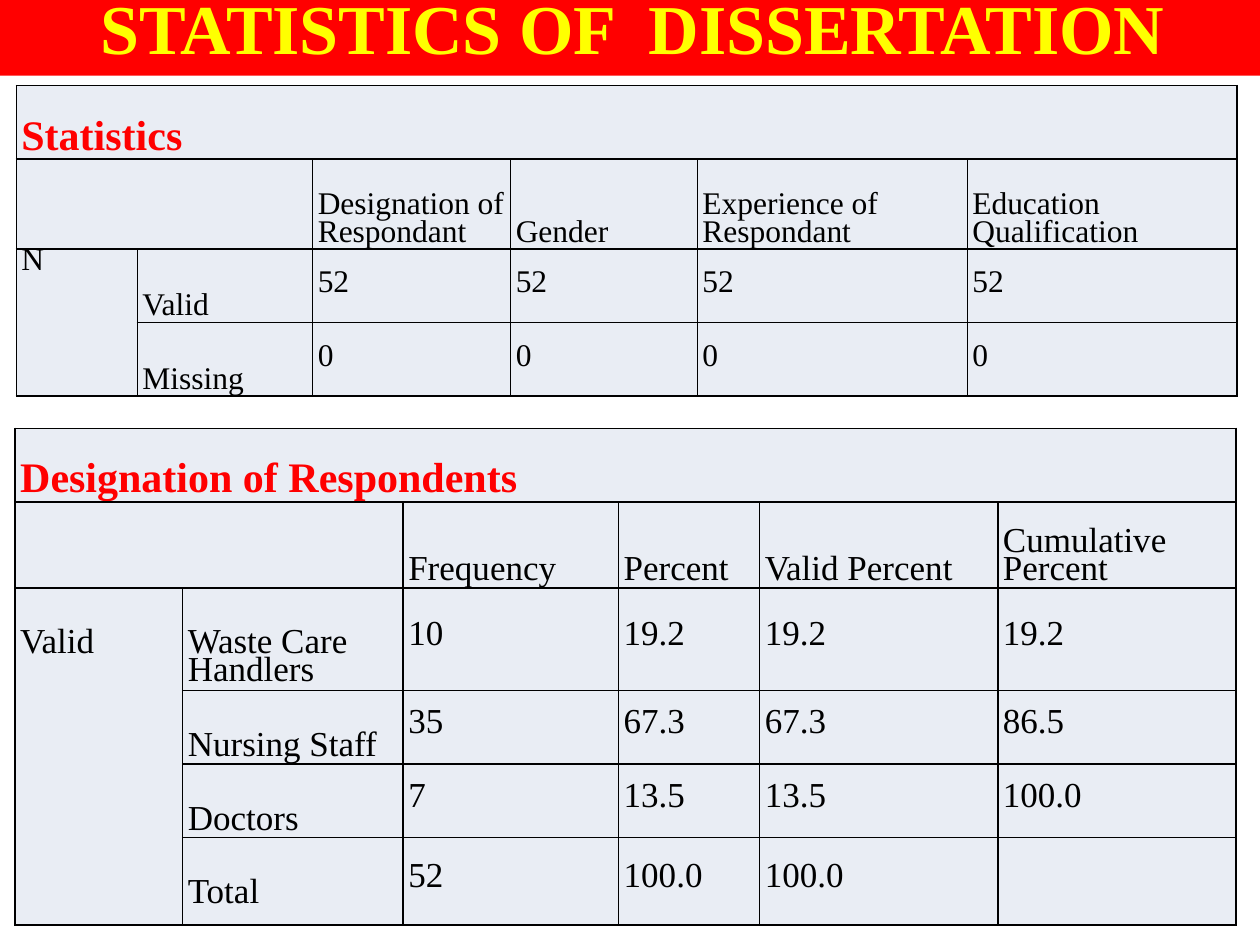
from lxml import etree
from pptx import Presentation
from pptx import util as u
from pptx.dml.color import RGBColor
from pptx.enum import shapes, text
from pptx.oxml import ns

WIDTH, HEIGHT = u.Inches(10), u.Inches(7.5)
FONT = "Times New Roman"
RED, YELLOW, BLACK, PALE = "FF0000", "FFFF00", "000000", "E9EDF4"
LINE = u.Pt(16)
GAP = u.Pt(10)
LOWERED = LINE + GAP  # top inset that drops text by one line and its gap
TOP, MIDDLE, BOTTOM = (text.MSO_ANCHOR.TOP, text.MSO_ANCHOR.MIDDLE,
                       text.MSO_ANCHOR.BOTTOM)


def colour(hex_value):
    return RGBColor.from_string(hex_value)


def share(box):
    """Turn shares of the slide into left, top, width, height."""
    left, top, width, height = box
    return (round(left * WIDTH), round(top * HEIGHT),
            round(width * WIDTH), round(height * HEIGHT))


def write(frame, words, size, ink, bold=False):
    paragraph = frame.paragraphs[0]
    paragraph.line_spacing, paragraph.space_after = LINE, GAP
    paragraph._p.get_or_add_pPr().set("marL", str(u.Inches(0.04)))
    run = paragraph.add_run()
    run.text = words
    run.font.name, run.font.size, run.font.bold = FONT, u.Pt(size), bold
    run.font.color.rgb = colour(ink)
    return paragraph


def outline(cell):
    properties = cell._tc.get_or_add_tcPr()
    for side in ("a:lnL", "a:lnR", "a:lnT", "a:lnB"):
        border = etree.SubElement(properties, ns.qn(side), w=str(u.Pt(1)))
        fill = etree.SubElement(border, ns.qn("a:solidFill"))
        etree.SubElement(fill, ns.qn("a:srgbClr"), val=BLACK)


def title_band(slide, box, words):
    band = slide.shapes.add_shape(shapes.MSO_SHAPE.RECTANGLE, *share(box))
    band.shadow.inherit = False
    band.fill.solid()
    band.fill.fore_color.rgb = colour(RED)
    band.line.fill.background()
    frame = band.text_frame
    frame.word_wrap = True
    frame.vertical_anchor = BOTTOM
    frame.margin_bottom = u.Inches(0.06)
    heading = write(frame, words, 40, YELLOW, bold=True)
    heading.alignment = text.PP_ALIGN.CENTER


def statistics_table(slide, box, columns, rows, size, heading, headers,
                     group, records, group_inset):
    """Heading row, header row, then records beside one merged group cell."""
    left, top, width, height = share(box)
    table = slide.shapes.add_table(len(rows), len(columns), left, top,
                                   width, height).table
    table.first_row = table.horz_banding = False
    for column, weight in zip(table.columns, columns):
        column.width = round(width * weight / sum(columns))
    for row, weight in zip(table.rows, rows):
        row.height = round(height * weight / sum(rows))

    for cell in table.iter_cells():
        outline(cell)
        cell.fill.solid()
        cell.fill.fore_color.rgb = colour(PALE)

    def put(row, column, words, anchor, inset=0, **style):
        cell = table.cell(row, column)
        cell.vertical_anchor = anchor
        cell.margin_left = cell.margin_right = cell.margin_bottom = 0
        cell.margin_top = inset
        if words:
            write(cell.text_frame, words, **({"size": size, "ink": BLACK} | style))

    # Merged areas
    table.cell(0, 0).merge(table.cell(0, len(columns) - 1))
    table.cell(1, 0).merge(table.cell(1, 1))
    table.cell(2, 0).merge(table.cell(len(rows) - 1, 0))

    # Heading, headers and group label
    put(0, 0, heading, MIDDLE, LOWERED, size=24, ink=RED, bold=True)
    for column, header in enumerate(headers, 2):
        put(1, column, header, BOTTOM)
    put(2, 0, group, TOP, group_inset)

    # Records
    for row, (label, *values) in enumerate(records, 2):
        put(row, 1, label, TOP, LOWERED)
        for column, value in enumerate(values, 2):
            put(row, column, value, MIDDLE)


def main():
    deck = Presentation()
    deck.slide_width, deck.slide_height = WIDTH, HEIGHT
    slide = deck.slides.add_slide(deck.slide_layouts[6])

    title_band(slide, (0, -0.11 / 7.5, 1, 0.71 / 7.5),
               "STATISTICS OF  DISSERTATION")

    statistics_table(
        slide, (0.013, 0.68 / 7.5, 0.969, 2.46 / 7.5),
        columns=(0.96, 1.39, 1.57, 1.48, 2.14, 2.14),
        rows=(0.58, 0.71, 0.58, 0.58), size=18,
        heading="Statistics",
        headers=("Designation of Respondant", "Gender",
                 "Experience of Respondant", "Education Qualification"),
        group="N", group_inset=0,
        records=(("Valid", "52", "52", "52", "52"),
                 ("Missing", "0", "0", "0", "0")))

    statistics_table(
        slide, (0.012, 3.4 / 7.5, 0.969, 3.94 / 7.5),
        columns=(1.33, 1.75, 1.71, 1.12, 1.89, 1.89),
        rows=(0.58, 0.68, 0.81, 0.58, 0.58, 0.69), size=20,
        heading="Designation of Respondents",
        headers=("Frequency", "Percent", "Valid Percent",
                 "Cumulative Percent"),
        group="Valid", group_inset=LOWERED,
        records=(("Waste Care Handlers", "10", "19.2", "19.2", "19.2"),
                 ("Nursing Staff", "35", "67.3", "67.3", "86.5"),
                 ("Doctors", "7", "13.5", "13.5", "100.0"),
                 ("Total", "52", "100.0", "100.0", "")))

    deck.save("out.pptx")


if __name__ == "__main__":
    main()
